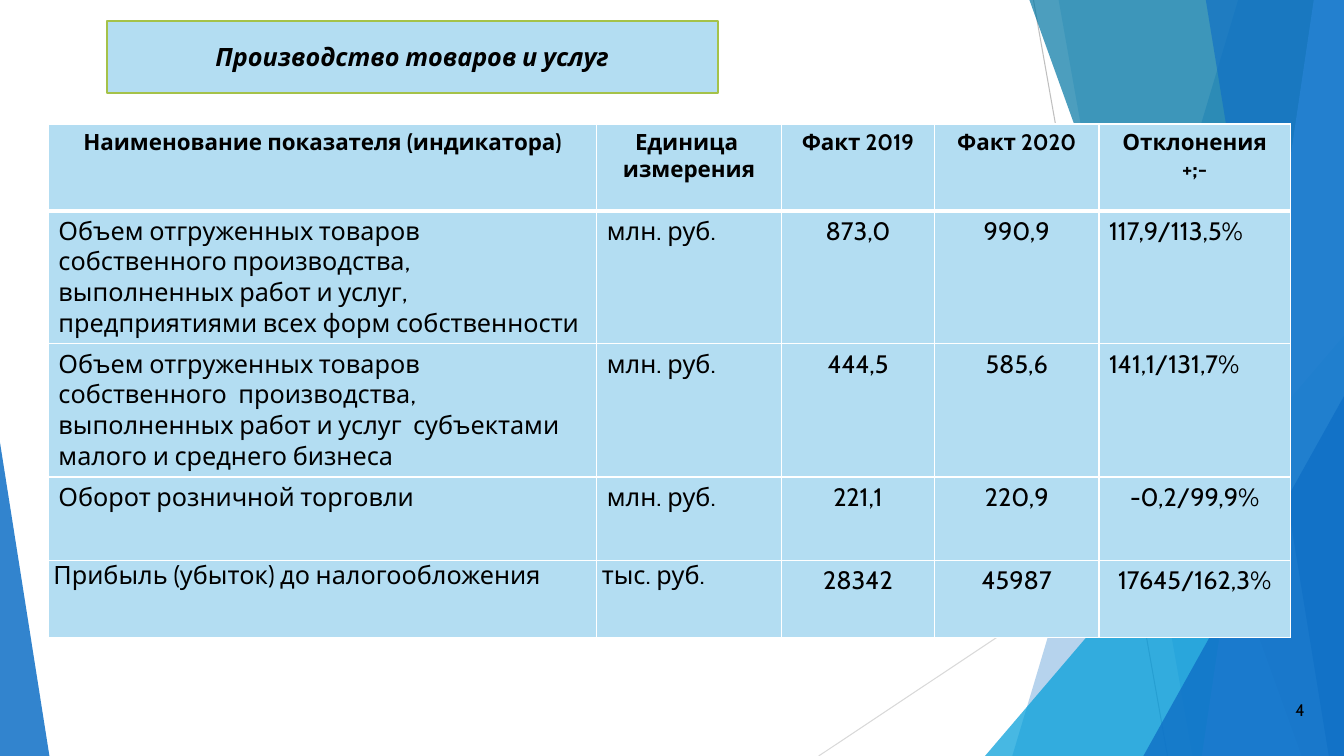
from lxml.etree import SubElement
from pptx import Presentation
from pptx.dml.color import RGBColor
from pptx.enum.shapes import MSO_CONNECTOR, MSO_SHAPE
from pptx.enum.text import MSO_ANCHOR, MSO_AUTO_SIZE, PP_ALIGN
from pptx.oxml import parse_xml
from pptx.oxml.ns import nsdecls, qn
from pptx.util import Inches, Pt

FONT = "Cabin"
BLACK = RGBColor(0x00, 0x00, 0x00)
WHITE = RGBColor(0xFF, 0xFF, 0xFF)
PALE_BLUE = RGBColor(0xB3, 0xDD, 0xF2)
GREEN = RGBColor(0xA5, 0xC2, 0x49)
BLUE = RGBColor(0x0F, 0x6F, 0xC6)
CYAN = RGBColor(0x00, 0x9D, 0xD9)
TEAL = RGBColor(0x00, 0x76, 0xA3)
LIGHT_BLUE = RGBColor(0x59, 0xAA, 0xF2)
GRAY = RGBColor(0xBF, 0xBF, 0xBF)
LIGHT_GRAY = RGBColor(0xD9, 0xD9, 0xD9)

WIDTH, HEIGHT = 13.33, 7.5

RAYS = [  # start x, end x, colour, opacity in percent
    (10.25, 11.58, 0, 7.5, GRAY),
    (13.33, 8.12, 4.03, 7.5, LIGHT_GRAY),
]
# Bands reach the right edge: top left x, bottom left x, colour, opacity
BACK_BANDS = [(12.28, 10.04, BLUE, 30), (10.5, 11.83, BLUE, 20)]
FRONT_BANDS = [(10.21, 12.91, TEAL, 70), (13.03, 11.92, LIGHT_BLUE, 70),
               (11.96, 13.18, BLUE, 65)]

COLUMNS = [5.44, 1.83, 1.52, 1.63, 1.9]
ROWS = [0.86, 1.13, 1.13, 0.83, 0.76]
INDICATORS = [
    ["Наименование показателя (индикатора)", "Единица \vизмерения",
     "Факт 2019", "Факт 2020", "Отклонения +;-"],
    ["Объем отгруженных товаров собственного производства, выполненных работ "
     "и услуг, предприятиями всех форм собственности",
     "млн. руб.", "873,0", "990,9", "117,9/113,5%"],
    ["Объем отгруженных товаров собственного  производства, выполненных работ "
     "и услуг  субъектами малого и среднего бизнеса",
     "млн. руб.", "444,5", "585,6", "141,1/131,7%"],
    ["Оборот розничной торговли", "млн. руб.", "221,1", "220,9", "-0,2/99,9%"],
    ["Прибыль (убыток) до налогообложения", "тыс. руб.", "28342", "45987",
     "17645/162,3%"],
]
LEFT_ALIGNED = {(row, column) for row in range(1, 5) for column in (0, 1)}
LEFT_ALIGNED |= {(1, 4), (2, 4)}


def style_text(para, size, align, bold=False, italic=False):
    para.alignment = align
    font = para.font
    font.name, font.size, font.bold, font.italic = FONT, Pt(size), bold, italic
    font.color.rgb = BLACK


def paint(shape, color, opacity):
    """Fill a shape without outline or shadow, at a percentage of opacity."""
    shape.shadow.inherit = False
    shape.line.fill.background()
    shape.fill.solid()
    shape.fill.fore_color.rgb = color
    tint = shape.fill._xPr.find(qn("a:solidFill"))[0]
    SubElement(tint, qn("a:alpha"), val=str(opacity * 1000))


def add_ray(page, start_x, end_x, start_y, end_y, color):
    ray = page.shapes.add_connector(
        MSO_CONNECTOR.STRAIGHT, Inches(start_x), Inches(start_y),
        Inches(end_x), Inches(end_y))
    ray.line.color.rgb = color
    ray.line.width = Pt(0.75)
    SubElement(ray._element.spPr, qn("a:effectLst"))


def add_band(page, top_x, bottom_x, color, opacity):
    right, bottom = Inches(WIDTH), Inches(HEIGHT)
    builder = page.shapes.build_freeform(Inches(top_x), 0)
    builder.add_line_segments(
        [(right, 0), (right, bottom), (Inches(bottom_x), bottom)])
    paint(builder.convert_to_shape(), color, opacity)


def add_corner(page, left, top, width, apex, color, opacity):
    """Add a triangle standing on the bottom edge of the slide."""
    corner = page.shapes.add_shape(
        MSO_SHAPE.ISOSCELES_TRIANGLE, Inches(left), Inches(top),
        Inches(width), Inches(HEIGHT - top))
    corner.adjustments[0] = apex
    paint(corner, color, opacity)


def add_background(page):
    for ray in RAYS:
        add_ray(page, *ray)
    for band in BACK_BANDS:
        add_band(page, *band)
    add_corner(page, 9.77, 3.33, WIDTH - 9.77, 1, CYAN, 72)
    for band in FRONT_BANDS:
        add_band(page, *band)
    add_corner(page, 11.34, 3.93, WIDTH - 11.34, 1, BLUE, 80)
    add_corner(page, 0, 4.39, 0.49, 0, BLUE, 85)


def place(shape, box):
    shape.left, shape.top, shape.width, shape.height = map(Inches, box)


def add_title(page, box):
    """Turn the title placeholder into a pentagon arrow."""
    title = page.shapes.title
    place(title, box)
    title._element.spPr.xfrm.addnext(parse_xml(
        f'<a:prstGeom {nsdecls("a")} prst="homePlate"><a:avLst/></a:prstGeom>'))
    title.fill.solid()
    title.fill.fore_color.rgb = PALE_BLUE
    title.line.color.rgb = GREEN
    title.line.width = Pt(1.5)
    frame = title.text_frame
    frame.text = "Производство товаров и услуг"
    frame.auto_size = MSO_AUTO_SIZE.NONE
    frame.vertical_anchor = MSO_ANCHOR.MIDDLE
    style_text(frame.paragraphs[0], 18, PP_ALIGN.CENTER, bold=True, italic=True)


def add_borders(cell, row):
    widths = {"lnL": 1, "lnR": 1, "lnT": 3 if row == 1 else 1,
              "lnB": 3 if row == 0 else 1}
    for index, (side, width) in enumerate(widths.items()):
        cell._tc.get_or_add_tcPr().insert(index, parse_xml(
            f'<a:{side} {nsdecls("a")} w="{Pt(width)}"><a:solidFill>'
            f'<a:srgbClr val="{WHITE}"/></a:solidFill></a:{side}>'))


def add_indicators(page, box):
    table = page.shapes.add_table(
        len(ROWS), len(COLUMNS), *map(Inches, box)).table
    for column, width in zip(table.columns, COLUMNS):
        column.width = Inches(width)
    for row, height in zip(table.rows, ROWS):
        row.height = Inches(height)
    for row, texts in enumerate(INDICATORS):
        for column, text in enumerate(texts):
            cell = table.cell(row, column)
            cell.text = text
            cell.fill.solid()
            cell.fill.fore_color.rgb = PALE_BLUE
            add_borders(cell, row)
            left = (row, column) in LEFT_ALIGNED
            style_text(cell.text_frame.paragraphs[0], 18 if row else 16,
                       PP_ALIGN.LEFT if left else PP_ALIGN.CENTER, bold=row == 0)
            if row == len(ROWS) - 1 and left:
                cell.margin_left = cell.margin_right = Inches(0.05)
                cell.margin_top = cell.margin_bottom = 0


def add_page_number(page, box):
    frame = page.shapes.add_textbox(*map(Inches, box)).text_frame
    frame.word_wrap = True
    frame.vertical_anchor = MSO_ANCHOR.MIDDLE
    frame.text = "4"
    style_text(frame.paragraphs[0], 12, PP_ALIGN.RIGHT)


def main():
    deck = Presentation()
    deck.slide_width, deck.slide_height = Inches(WIDTH), Inches(HEIGHT)
    page = deck.slides.add_slide(deck.slide_layouts.get_by_name("Title Only"))
    add_background(page)
    add_title(page, (1.06, 0.21, 6.06, 0.71))
    add_indicators(page, (0.48, 1.23, sum(COLUMNS), sum(ROWS)))
    add_page_number(page, (12.29, 6.84, 0.75, 0.4))
    deck.save("out.pptx")


if __name__ == "__main__":
    main()
